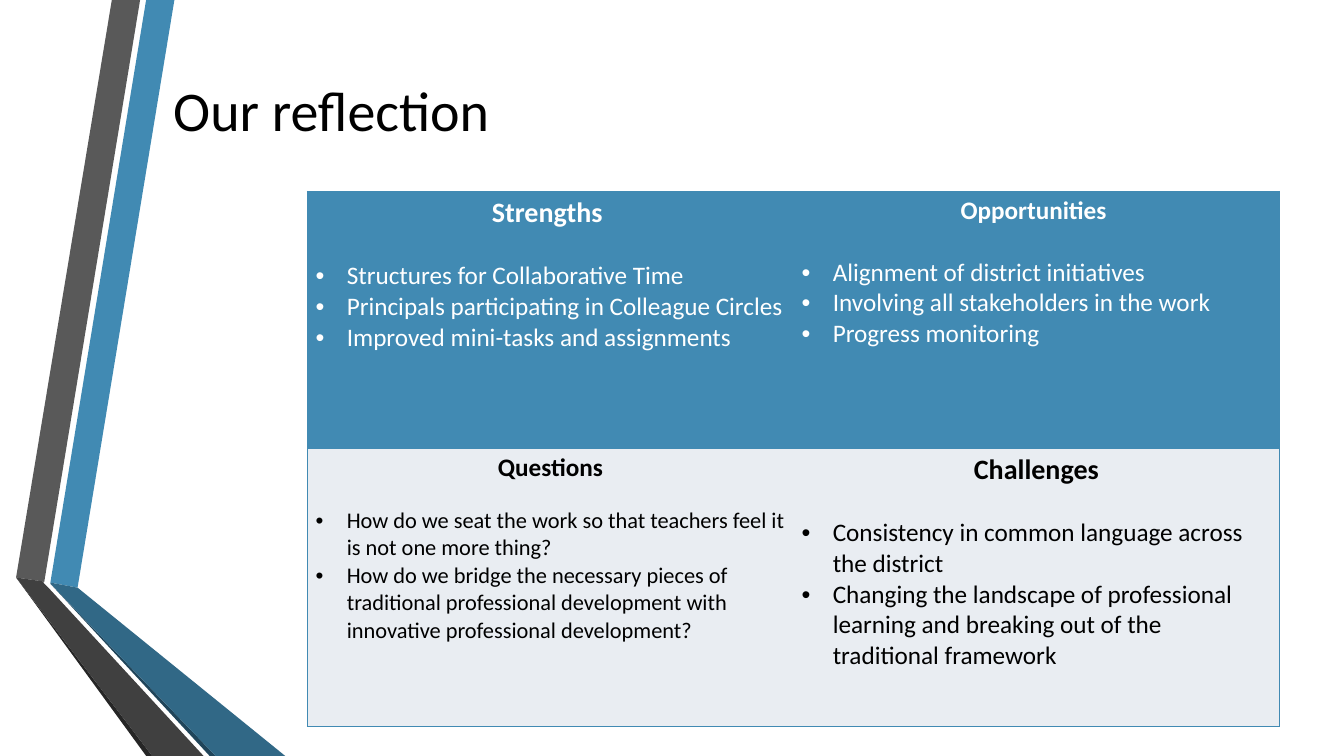
import pptx
import pptx.util
import pptx.dml.color
import pptx.enum.text
import pptx.oxml
import pptx.oxml.ns
from dataclasses import dataclass
from pptx.util import Inches, Pt

FONT = "Calibri"
BLUE, PALE, WHITE, BLACK = "418AB3", "E9EDF2", "FFFFFF", "000000"
ALIGN = pptx.enum.text.PP_ALIGN
ANCHOR = pptx.enum.text.MSO_ANCHOR


@dataclass
class Band:
    fill: str
    points: list[tuple[float, float]]


@dataclass
class Panel:
    row: int
    col: int
    title: str
    head: int
    body: int
    gap: int
    items: list[str]


BANDS = [
    Band(BLUE, [(0.5, 5.78), (0.77, 5.83), (1.73, 0), (1.45, 0)]),
    Band("595959", [(1.39, 0), (1.11, 0), (0.16, 5.73), (0.44, 5.77)]),
    Band("262626", [(0.16, 5.73), (1.45, 7.5), (1.51, 7.5)]),
    Band("20455A", [(0.5, 5.79), (2.08, 7.5), (2.14, 7.5)]),
    Band("316886", [(0.5, 5.79), (2.14, 7.5), (2.83, 7.5), (0.77, 5.83), (0.5, 5.78)]),
    Band("404040", [(2.02, 7.5), (0.48, 5.83), (0.43, 5.78), (0.44, 5.77),
                    (0.16, 5.73), (1.51, 7.5)]),
]

PANELS = [
    Panel(0, 0, "Strengths ", 20, 18, 22, [
        "Structures for Collaborative Time",
        "Principals participating in Colleague Circles",
        "Improved mini-tasks and assignments"]),
    Panel(0, 1, "Opportunities ", 18, 18, 22, [
        "Alignment of district initiatives",
        "Involving all stakeholders in the work",
        "Progress monitoring"]),
    Panel(1, 0, "Questions", 18, 16, 17, [
        "How do we seat the work so that teachers feel it is not one more thing?",
        "How do we bridge the necessary pieces of traditional professional "
        "development with innovative professional development?"]),
    Panel(1, 1, "Challenges", 20, 18, 22, [
        "Consistency in common language across the district",
        "Changing the landscape of professional learning and breaking out of "
        "the traditional framework"]),
]


def color(code: str) -> pptx.dml.color.RGBColor:
    return pptx.dml.color.RGBColor.from_string(code)


def paint(thing, code: str) -> None:
    thing.fill.solid()
    thing.fill.fore_color.rgb = color(code)


def write(para, text: str, size: int, code: str, bold: bool = False) -> None:
    run = para.add_run()
    run.text = text
    run.font.name = FONT
    run.font.size = Pt(size)
    run.font.bold = bold
    run.font.color.rgb = color(code)


def bullet(para) -> None:
    props = para._p.get_or_add_pPr()
    props.set("marL", str(Inches(0.31)))
    props.set("indent", str(-Inches(0.31)))
    space = pptx.oxml.ns.nsdecls("a")
    props.append(pptx.oxml.parse_xml(f'<a:buFont {space} typeface="Arial"/>'))
    props.append(pptx.oxml.parse_xml(f'<a:buChar {space} char="•"/>'))


def border(cell, edges: set[str]) -> None:
    """Draw the named edges in blue and clear the others."""
    props = cell._tc.get_or_add_tcPr()
    space = pptx.oxml.ns.nsdecls("a")
    for place, edge in enumerate("LRTB"):
        ink = "<a:noFill/>"
        if edge in edges:
            ink = f'<a:solidFill><a:srgbClr val="{BLUE}"/></a:solidFill>'
        line = f'<a:ln{edge} {space} w="{Pt(1)}">{ink}</a:ln{edge}>'
        props.insert(place, pptx.oxml.parse_xml(line))


def draw_band(slide, band: Band) -> None:
    first, *rest = [(Inches(x), Inches(y)) for x, y in band.points]
    pen = slide.shapes.build_freeform(*first)
    pen.add_line_segments(rest, close=True)
    shape = pen.convert_to_shape()
    shape.shadow.inherit = False
    shape.line.fill.background()
    paint(shape, band.fill)


def draw_title(slide, text: str) -> None:
    box = slide.shapes.add_textbox(Inches(1.62), Inches(0.12), Inches(10.96), Inches(1.92))
    frame = box.text_frame
    frame.word_wrap = True
    frame.vertical_anchor = ANCHOR.MIDDLE
    write(frame.paragraphs[0], text, 40, BLACK)


def fill_cell(cell, panel: Panel) -> None:
    top = panel.row == 0
    ink = WHITE if top else BLACK
    paint(cell, BLUE if top else PALE)
    border(cell, {"T" if top else "B", "R" if panel.col else "L"})
    cell.margin_left = cell.margin_right = Inches(0.08)
    cell.margin_top = cell.margin_bottom = Inches(0.04)
    frame = cell.text_frame
    head = frame.paragraphs[0]
    head.alignment = ALIGN.CENTER
    head.space_after = Pt(panel.gap)
    write(head, panel.title, panel.head, ink, True)
    for item in panel.items:
        para = frame.add_paragraph()
        bullet(para)
        write(para, item, panel.body, ink)


def draw_grid(slide, panels: list[Panel]) -> None:
    table = slide.shapes.add_table(
        2, 2, Inches(3.05), Inches(1.9), Inches(9.64), Inches(5.31)).table
    for row, height in zip(table.rows, (2.55, 2.76)):
        row.height = Inches(height)
    for panel in panels:
        fill_cell(table.cell(panel.row, panel.col), panel)


def main() -> None:
    deck = pptx.Presentation()
    deck.slide_width, deck.slide_height = Inches(13.33), Inches(7.5)
    slide = deck.slides.add_slide(deck.slide_layouts[6])
    for band in BANDS:
        draw_band(slide, band)
    draw_grid(slide, PANELS)
    draw_title(slide, "Our reflection")
    deck.save("out.pptx")


if __name__ == "__main__":
    main()
